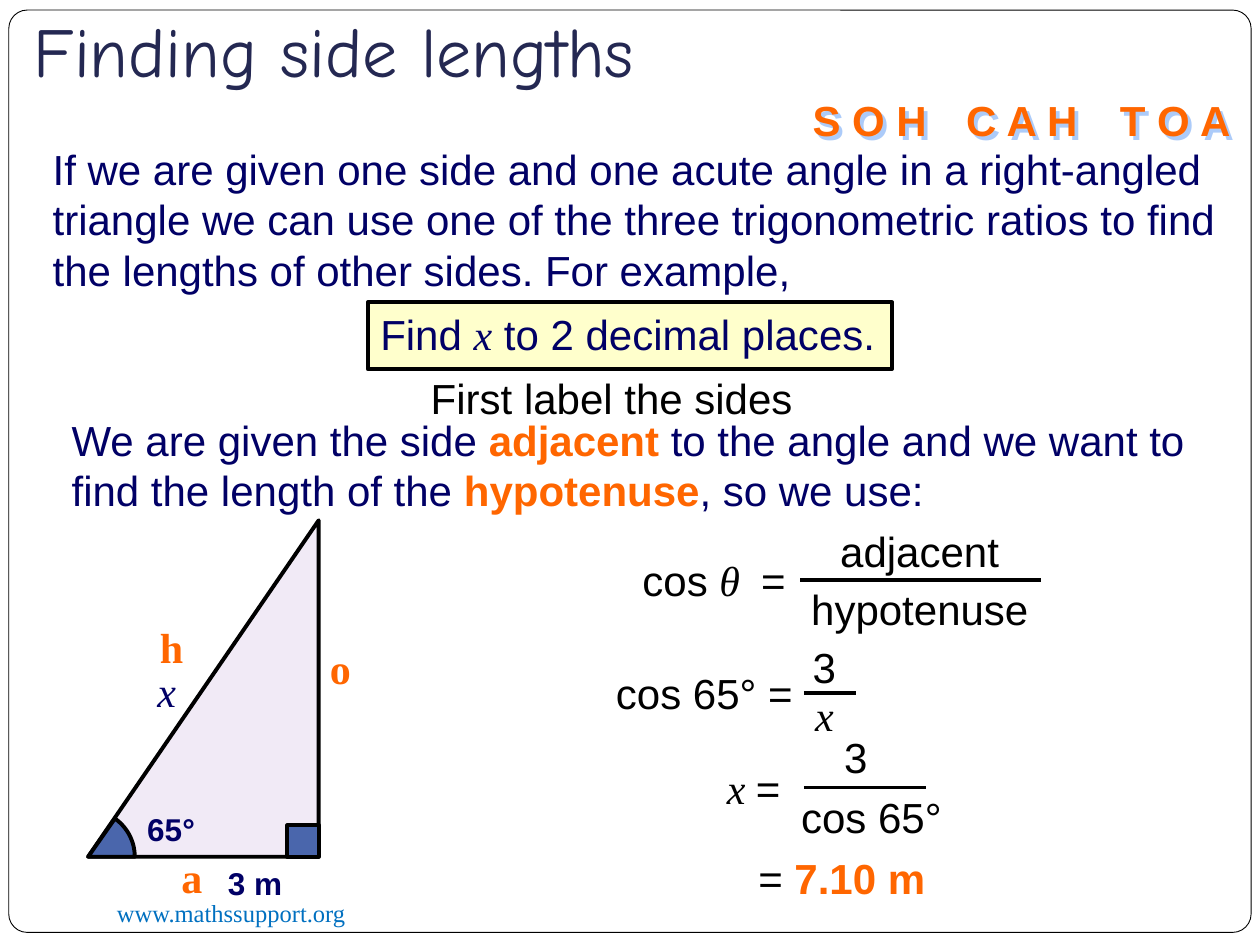
"""Builds a trigonometry slide on finding side lengths in a right-angled triangle."""
from dataclasses import dataclass, field
from math import cos, radians, sin

from lxml.etree import SubElement
from pptx import Presentation
from pptx.dml.color import RGBColor
from pptx.enum.shapes import MSO_CONNECTOR, MSO_SHAPE
from pptx.enum.text import MSO_ANCHOR, MSO_AUTO_SIZE, PP_ALIGN
from pptx.oxml.ns import qn
from pptx.util import Inches, Pt


@dataclass(frozen=True)
class TextStyle:
    font: str
    color: str
    size: int = 24
    bold: bool = False
    italic: bool = False


@dataclass(frozen=True)
class Theme:
    paper: str = "FFFFFF"
    ink: str = "000000"
    note: str = "FFFFCC"
    triangle: str = "F1EAF6"
    angle: str = "4A66AC"
    glow: str = "ACCBF9"
    thin: float = 0.5
    thick: float = 2.25
    text: dict = field(default_factory=lambda: {
        "title": TextStyle("Comic Neue", "242852", 40),
        "site": TextStyle("Times New Roman", "0070C0", 14),
        "body": TextStyle("Arial", "010066"),
        "key": TextStyle("Arial", "FF6600", bold=True),
        "measure": TextStyle("Arial", "010066", 18, bold=True),
        "unknown": TextStyle("Times New Roman", "010066", italic=True),
        "side": TextStyle("Times New Roman", "FF6600", bold=True),
        "working": TextStyle("Arial", "000000"),
        "symbol": TextStyle("Times New Roman", "000000", italic=True),
    })


class LessonSlide:
    """Draws styled elements on one slide, measured on a 100 by 75 grid."""

    def __init__(self, presentation, theme):
        self.theme = theme
        self.slide = presentation.slides.add_slide(presentation.slide_layouts[6])
        self.column = presentation.slide_width / 100
        self.row = presentation.slide_height / 75

    def place(self, *lengths):
        units = (self.column, self.row) * 2
        return [round(length * unit) for length, unit in zip(lengths, units)]

    def paint(self, shape, fill, weight):
        shape.shadow.inherit = False
        shape.fill.solid()
        shape.fill.fore_color.rgb = RGBColor.from_string(fill)
        shape.line.color.rgb = RGBColor.from_string(self.theme.ink)
        shape.line.width = Pt(weight)
        return shape

    def shape(self, preset, box, fill, weight):
        return self.paint(self.slide.shapes.add_shape(preset, *self.place(*box)), fill, weight)

    def sector(self, center, radius, sweep, steps=16):
        arc = [self.place(center[0] + radius * cos(turn), center[1] - radius * sin(turn))
               for turn in (radians(sweep * step / steps) for step in range(steps + 1))]
        builder = self.slide.shapes.build_freeform(*self.place(*center))
        builder.add_line_segments(arc, close=True)
        return self.paint(builder.convert_to_shape(), self.theme.angle, self.theme.thick)

    def bar(self, left, right, height):
        line = self.slide.shapes.add_connector(
            MSO_CONNECTOR.STRAIGHT, *self.place(left, height, right, height))
        line.line.color.rgb = RGBColor.from_string(self.theme.ink)
        line.line.width = Pt(self.theme.thick)
        SubElement(line._element.spPr, qn("a:effectLst"))

    def style(self, font, name):
        look = self.theme.text[name]
        font.name, font.size = look.font, Pt(look.size)
        font.bold, font.italic = look.bold, look.italic
        font.color.rgb = RGBColor.from_string(look.color)

    def fill_text(self, shape, runs, wrap=False):
        frame = shape.text_frame
        frame.word_wrap = wrap
        frame.auto_size = MSO_AUTO_SIZE.SHAPE_TO_FIT_TEXT
        frame.vertical_anchor = MSO_ANCHOR.TOP
        paragraph = frame.paragraphs[0]
        paragraph.alignment = PP_ALIGN.LEFT
        if len(runs) == 1:
            self.style(paragraph.font, runs[0][1])
        for words, name in runs:
            run = paragraph.add_run()
            run.text = words
            if len(runs) > 1:
                self.style(run.font, name)

    def text(self, box, *runs, wrap=False):
        shape = self.slide.shapes.add_textbox(*self.place(*box))
        self.fill_text(shape, runs, wrap)
        return shape

    def title(self, box, words):
        frame = self.text(box, (words, "title"), wrap=True).text_frame
        frame.auto_size = MSO_AUTO_SIZE.NONE
        frame.vertical_anchor = MSO_ANCHOR.BOTTOM
        frame.margin_bottom = Inches(0.1)

    def mnemonic(self, box, letters):
        shape = self.text(box, (letters, "key"))
        effects = SubElement(shape._element.spPr, qn("a:effectLst"))
        shadow = SubElement(effects, qn("a:outerShdw"), dist="38100", dir="2700000", algn="tl")
        SubElement(shadow, qn("a:srgbClr"), val=self.theme.glow)


def draw_triangle(lesson):
    theme = lesson.theme
    left, top, width, height = 7, 41.3, 18.3, 26.7
    right, base, corner = left + width, top + height, 2.5
    triangle = lesson.shape(MSO_SHAPE.RIGHT_TRIANGLE, (left, top, width, height),
                            theme.triangle, theme.thick)
    triangle._element.spPr.xfrm.set("flipH", "1")
    lesson.sector((left, base), 3.7, 55)
    lesson.shape(MSO_SHAPE.RECTANGLE, (right - corner, base - corner, corner, corner),
                 theme.angle, theme.thick)
    for words, name, box in (
        ("65°", "measure", (10.7, 63.8, 5.8, 4)),
        ("x", "unknown", (11.5, 52.3, 3.5, 5)),
        ("3 m", "measure", (17.1, 68.1, 6.4, 4)),
        ("h", "side", (11.7, 48.8, 4.1, 5)),
        ("o", "side", (25.2, 50.5, 3.8, 5)),
        ("a", "side", (13.4, 67.1, 3.9, 5)),
    ):
        lesson.text(box, (words, name))


def draw_working(lesson):
    for box, *runs in (
        ((50, 43.5, 13.5, 5.1), ("cos ", "working"), ("θ  ", "symbol"), ("=", "working")),
        ((65.7, 41.2, 14.8, 5.1), ("adjacent", "working")),
        ((63.4, 45.8, 19.3, 5), ("hypotenuse", "working")),
        ((47.9, 52.5, 16.2, 5.1), ("cos 65° =", "working")),
        ((63.5, 50.4, 3.9, 5.1), ("3", "working")),
        ((63.7, 54.2, 3.5, 5), ("x", "symbol")),
        ((56.7, 60, 6.3, 5.1), ("x ", "symbol"), ("=", "working")),
        ((66, 57.6, 3.9, 5.1), ("3", "working")),
        ((62.6, 62.3, 13.3, 5.1), ("cos 65°", "working")),
        ((59.2, 67.2, 15.4, 5), ("=", "working"), (" 7.10 m", "key")),
    ):
        lesson.text(box, *runs)
    for fraction_bar in ((63.5, 82.6, 46), (63.8, 67.9, 55), (63.8, 73.5, 62.5)):
        lesson.bar(*fraction_bar)


def main():
    presentation = Presentation()
    presentation.slide_width, presentation.slide_height = Inches(10), Inches(7.5)
    theme = Theme()
    lesson = LessonSlide(presentation, theme)

    frame = lesson.shape(MSO_SHAPE.ROUNDED_RECTANGLE, (0.7, 0.8, 98.6, 73.2),
                         theme.paper, theme.thin)
    frame.adjustments[0] = 0.02
    lesson.text((8.3, 70.8, 32.5, 3.4), ("www.mathssupport.org", "site"), wrap=True)
    lesson.title((1.7, 1.6, 85, 6.7), "Finding side lengths")
    for left, letters in ((63.5, "S O H"), (75.7, "C A H"), (87.9, "T O A")):
        lesson.mnemonic((left, 7, 11.1, 5), letters)

    lesson.text((3.2, 10.9, 94.3, 13), (
        "If we are given one side and one acute angle in a right-angled triangle we can use "
        "one of the three trigonometric ratios to find the lengths of other sides. "
        "For example,", "body"), wrap=True)
    task = lesson.shape(MSO_SHAPE.RECTANGLE, (29.2, 24, 41.6, 5.3), theme.note, theme.thick)
    lesson.fill_text(task, (("Find ", "body"), ("x", "unknown"),
                            (" to 2 decimal places.", "body")))
    lesson.text((33.2, 29.1, 34.2, 5), ("First label the sides", "working"), wrap=True)
    lesson.text((4.7, 32.4, 94.1, 9.1),
                ("We are given the side ", "body"), ("adjacent", "key"),
                (" to the angle and we want to find the length of the ", "body"),
                ("hypotenuse", "key"), (", so we use:", "body"), wrap=True)

    draw_triangle(lesson)
    draw_working(lesson)
    presentation.save("out.pptx")


if __name__ == "__main__":
    main()
